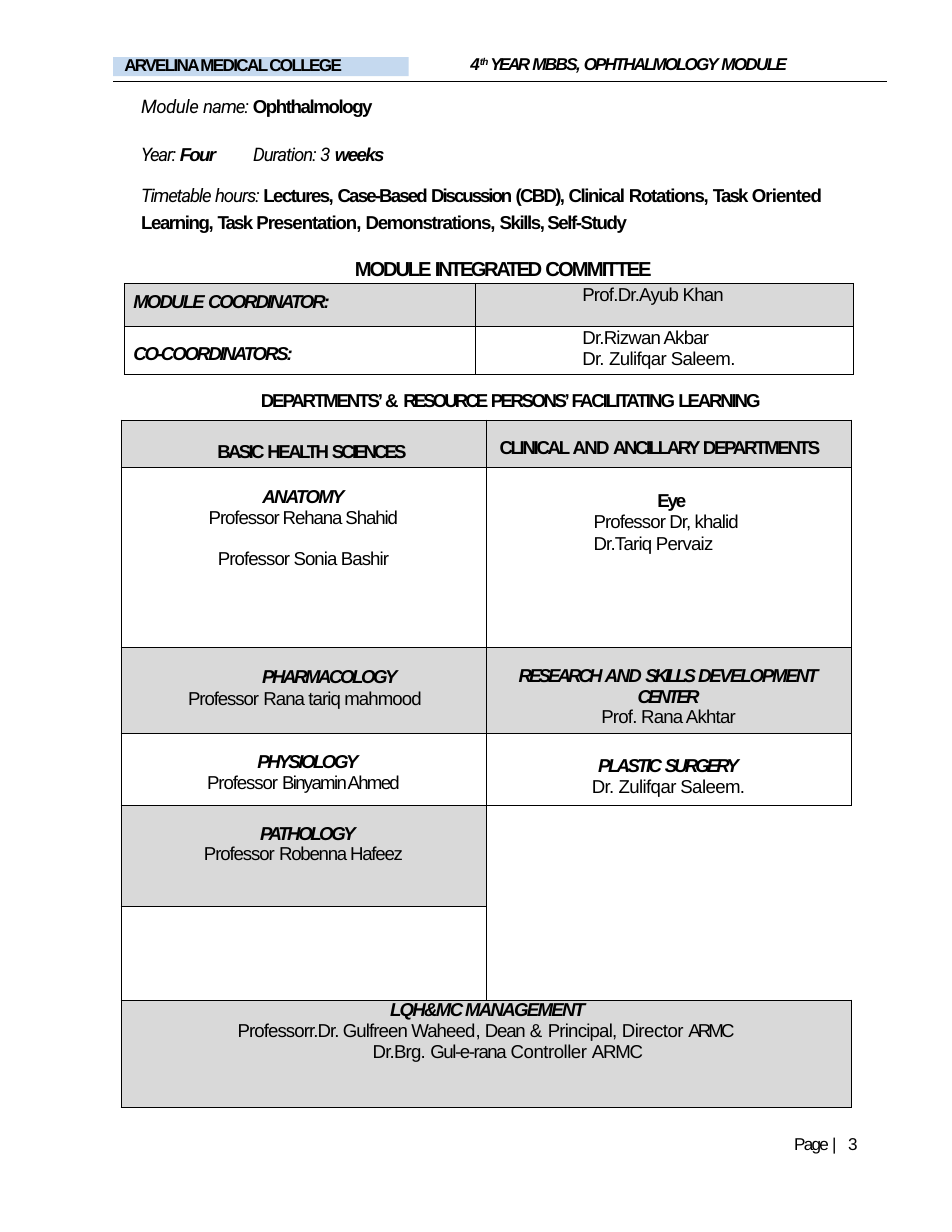
from dataclasses import dataclass, field
from pptx import Presentation
from pptx import util as u
from pptx.dml.color import RGBColor
from pptx.enum import shapes, text
from pptx.oxml import ns, xmlchemy

Inches, Pt = u.Inches, u.Pt


@dataclass(frozen=True)
class Theme:
    ink: RGBColor = RGBColor(0, 0, 0)
    gray: RGBColor = RGBColor(0xD9, 0xD9, 0xD9)
    band: RGBColor = RGBColor(0xC5, 0xD9, 0xEF)
    sans: str = "Arial"
    label: str = "Roboto"
    small: float = 11
    body: float = 12
    title: float = 13
    rule: float = 0.75
    grid: float = 0.5


THEME = Theme()


@dataclass
class Para:
    """Runs are (text, tracking, style); style letters: b, i, r for Roboto, ^ for superscript."""
    runs: list
    left: float = 0
    first: float = 0
    before: float = 0
    line: object = None
    mid: bool = False
    size: float = THEME.body
    tabs: list = field(default_factory=list)


@dataclass
class Cell:
    paras: list = field(default_factory=list)
    top: float = 0
    gray: bool = False
    sides: str = "LRTB"


def add(parent, tag, **attrs):
    child = xmlchemy.OxmlElement(tag)
    for key, val in attrs.items():
        child.set(key, str(val))
    parent.append(child)
    return child


def add_run(para, words, track, style, size):
    run = para.add_run()
    run.text = words
    font = run.font
    font.name = THEME.label if "r" in style else THEME.sans
    font.size = Pt(size)
    font.bold, font.italic = "b" in style, "i" in style
    font.color.rgb = THEME.ink
    props = run._r.get_or_add_rPr()
    props.set("spc", str(round(track * 100)))
    if "^" in style:
        props.set("baseline", "32000")


def fill_text(frame, paras, top=0):
    frame.word_wrap = True
    frame.margin_left = frame.margin_right = frame.margin_bottom = 0
    frame.margin_top = Inches(top)
    frame.vertical_anchor = text.MSO_ANCHOR.TOP
    write(frame, paras)


def write(frame, paras):
    for n, item in enumerate(paras):
        para = frame.add_paragraph() if n else frame.paragraphs[0]
        para.alignment = text.PP_ALIGN.CENTER if item.mid else text.PP_ALIGN.LEFT
        para.space_before = Pt(item.before)
        if item.line:
            para.line_spacing = item.line
        props = para._p.get_or_add_pPr()
        props.set("marL", str(Inches(item.left)))
        props.set("indent", str(Inches(item.first)))
        if item.tabs:
            stops = add(props, "a:tabLst")
            for stop in item.tabs:
                add(stops, "a:tab", pos=Inches(stop), algn="l")
        for run in item.runs:
            if run == "break":
                para.add_line_break()
            else:
                add_run(para, *run, item.size)


def add_text(slide, box, paras, top=0.01):
    shape = slide.shapes.add_textbox(*map(Inches, box))
    fill_text(shape.text_frame, paras, top)


def add_band(slide, box, paras):
    shape = slide.shapes.add_shape(shapes.MSO_SHAPE.RECTANGLE, *map(Inches, box))
    shape.shadow.inherit = False
    shape.fill.solid()
    shape.fill.fore_color.rgb = THEME.band
    shape.line.fill.background()
    fill_text(shape.text_frame, paras)


def add_rule(slide, x1, x2, y):
    line = slide.shapes.add_connector(
        shapes.MSO_CONNECTOR.STRAIGHT, *map(Inches, (x1, y, x2, y)))
    line.line.color.rgb = THEME.ink
    line.line.width = Pt(THEME.rule)
    add(line._element.spPr, "a:effectLst")


def set_edge(cell, sides):
    props = cell._tc.get_or_add_tcPr()
    for n, side in enumerate("LRTB"):
        edge = xmlchemy.OxmlElement(f"a:ln{side}")
        edge.set("w", str(Pt(THEME.grid)))
        if side in sides:
            add(add(edge, "a:solidFill"), "a:srgbClr", val=THEME.ink)
        else:
            add(edge, "a:noFill")
        props.insert(n, edge)


def add_grid(slide, left, top, cols, rows, cells, spans=()):
    frame = slide.shapes.add_table(
        len(rows), len(cols), *map(Inches, (left, top, sum(cols), sum(rows))))
    table = frame.table
    table.first_row = table.horz_banding = False
    for col, wide in zip(table.columns, cols):
        col.width = Inches(wide)
    for row, high in zip(table.rows, rows):
        row.height = Inches(high)
    for r, line in enumerate(cells):
        for c, item in enumerate(line):
            cell = table.cell(r, c)
            cell.margin_left = cell.margin_right = cell.margin_bottom = 0
            cell.margin_top = Inches(item.top)
            if item.gray:
                cell.fill.solid()
                cell.fill.fore_color.rgb = THEME.gray
            else:
                cell.fill.background()
            set_edge(cell, item.sides)
            write(cell.text_frame, item.paras)
    for start, end in spans:
        table.cell(*start).merge(table.cell(*end))


def person(*runs):
    """Name with a hanging indent."""
    return Para(list(runs), left=1.06, first=-0.1, line=1.02)


def center(*runs, left=0, **more):
    return Para(list(runs), left=left, mid=True, **more)


def add_head(slide):
    add_rule(slide, 1.01, 7.92, 0.73)
    add_text(slide, (4.2, 0.47, 3.65, 0.2), [Para([
        ("4", -0.3, "bi"), ("th ", -0.5, "bi^"), ("YEAR ", -1.7, "bi"), ("MBBS, ", -1.1, "bi"),
        ("OPHTHALMOLOGY ", -1.3, "bi"), ("MODULE", -1.1, "bi")], size=THEME.small)])
    add_band(slide, (1.01, 0.51, 2.64, 0.17), [Para(
        [("ARVELINA MEDICAL COLLEGE", -1.1, "b")], left=0.1, line=Pt(11.6), size=THEME.small)])
    add_text(slide, (7.09, 10.14, 0.75, 0.18), [Para(
        [("Page ", -1.1, ""), ("| ", 2.2, ""), ("3", -0.6, "")],
        line=Pt(11.5), size=THEME.small)], top=0)


def add_facts(slide):
    hours = [("Lectures, ", -1), ("Case-Based ", -1.2), ("Discussion ", -1.3), ("(CBD), ", -1.1),
             ("Clinical ", -0.9), ("Rotations, ", -0.8), ("Task ", -1.2), ("Oriented ", -0.6),
             ("Learning, ", -0.9), ("Task ", -1.2), ("Presentation, ", -0.7),
             ("Demonstrations, ", -0.8), ("Skills, Self-Study", -0.9)]
    add_text(slide, (1.26, 0.84, 6.17, 1.68), [
        Para([("Module ", -0.3, "ir"), ("name: ", -0.6, "ir"), ("Ophthalmology", -0.9, "b")]),
        Para([("Year: ", -0.8, "ir"), ("Four\t", -1.1, "bi"), ("Duration: ", -0.7, "ir"),
              ("3 ", -0.2, "ir"), ("weeks", -1, "bi")], before=16, tabs=[4.74]),
        Para([("Timetable ", -0.8, "ir"), ("hours: ", -0.7, "ir")]
             + [(words, track, "b") for words, track in hours], before=9.8, line=1.18),
        Para([("MODULE ", -1.4, "b"), ("INTEGRATED ", -1.6, "b"), ("COMMITTEE", -1.2, "b")],
             left=1.91, before=15, size=THEME.title)])
    add_text(slide, (2.33, 3.46, 4.51, 0.23), [Para([
        ("DEPARTMENTS’ ", -1.4, "b"), ("& ", -0.2, "b"), ("RESOURCE ", -1.9, "b"),
        ("PERSONS’ ", -1.6, "b"), ("FACILITATING ", -1.3, "b"), ("LEARNING", -1.4, "b")])])


def add_board(slide):
    add_grid(slide, 1.11, 2.53, [3.13, 3.38], [0.38, 0.43], [
        [Cell([Para([("MODULE ", -1.2, "bi"), ("COORDINATOR:", -1.4, "bi")], left=0.08)],
              0.07, True),
         Cell([person(("Prof.Dr.Ayub Khan", -0.5, ""))], 0.01, True)],
        [Cell([Para([("CO-COORDINATORS:", -1.4, "bi")], left=0.08)], 0.16),
         Cell([person(("Dr.Rizwan Akbar", -0.5, "")),
               person(("Dr. ", -0.5, ""), ("Zulifqar Saleem.", -0.4, ""))], 0.01)]])


def add_staff(slide):
    basic = Para([("BASIC ", -1.7, "b"), ("HEALTH ", -1.6, "b"), ("SCIENCES", -1.9, "b")],
                 left=0.86)
    clinic = Para([("CLINICAL ", -1.5, "b"), ("AND ", -1.1, "b"), ("ANCILLARY ", -1.6, "b"),
                   ("DEPARTMENTS", -1.5, "b")], left=0.12)
    prof = ("Professor ", -0.7, "")
    blank = Cell(sides="LTB")
    cells = [
        [Cell([basic], 0.19, True), Cell([clinic], 0.16, True)],
        [Cell([center(("ANATOMY", -1.1, "bi"), line=Pt(12.8)),
               center(("Professor Rehana Shahid", -0.7, ""), line=1.02),
               center(("Professor Sonia Bashir", -0.6, ""), line=1.02, before=13)], 0.18),
         Cell([Para([("Eye", -1.4, "b")], left=1.53, line=Pt(14.2)),
               person(("Professor Dr, khalid", -0.6, "")),
               person(("Dr.Tariq Pervaiz", -0.5, ""))], 0.2)],
        [Cell([Para([("PHARMACOLOGY", -1.6, "bi")], left=1.26, line=Pt(14.1)),
               Para([prof, ("Rana tariq mahmood", -0.6, "")], left=0.6, line=Pt(14.1))],
              0.16, True),
         Cell([center(("RESEARCH ", -1.9, "bi"), ("AND ", -1.1, "bi"), ("SKILLS ", -2, "bi"),
                      ("DEVELOPMENT", -1.4, "bi"), "break", ("CENTER", -1.9, "bi")),
               center(("Prof. Rana Akhtar", -0.5, ""))], 0.16, True)],
        [Cell([center(("PHYSIOLOGY", -1.6, "bi"), left=0.08),
               center(prof, ("Binyamin Ahmed", -1.1, ""))], 0.16),
         Cell([center(("PLASTIC ", -1.7, "bi"), ("SURGERY", -1.9, "bi")),
               center(("Dr. ", -0.5, ""), ("Zulifqar Saleem.", -0.4, ""))], 0.2)],
        [Cell([center(("PATHOLOGY", -1.6, "bi"), left=0.08),
               center(prof, ("Robenna Hafeez", -0.8, ""))], 0.16, True), blank],
        [Cell(), blank],
        [Cell([center(("LQH&MC MANAGEMENT", -1.1, "bi"), left=0.03),
               center(("Professorr.Dr. Gulfreen Waheed", -0.6, ""), (", ", -0.7, ""),
                      ("Dean ", -0.8, ""), ("& ", 0.1, ""), ("Principal, ", -0.5, ""),
                      ("Director ", -0.3, ""), ("ARMC", -1.9, "")),
               center(("Dr.Brg. ", -0.5, ""), ("Gul-e-rana ", -0.9, ""),
                      ("Controller ", -0.3, ""), ("ARMC", -0.8, ""), left=0.39)], 0, True),
         Cell(gray=True)]]
    add_grid(slide, 1.08, 3.75, [3.26] * 2, [0.42, 1.61, 0.77, 0.64, 0.9, 0.84, 0.96], cells,
             spans=[((4, 1), (5, 1)), ((6, 0), (6, 1))])


def main():
    deck = Presentation()
    deck.slide_width, deck.slide_height = Inches(8.5), Inches(11)
    slide = deck.slides.add_slide(deck.slide_layouts[6])
    add_head(slide)
    add_facts(slide)
    add_board(slide)
    add_staff(slide)
    deck.save("out.pptx")


if __name__ == "__main__":
    main()
